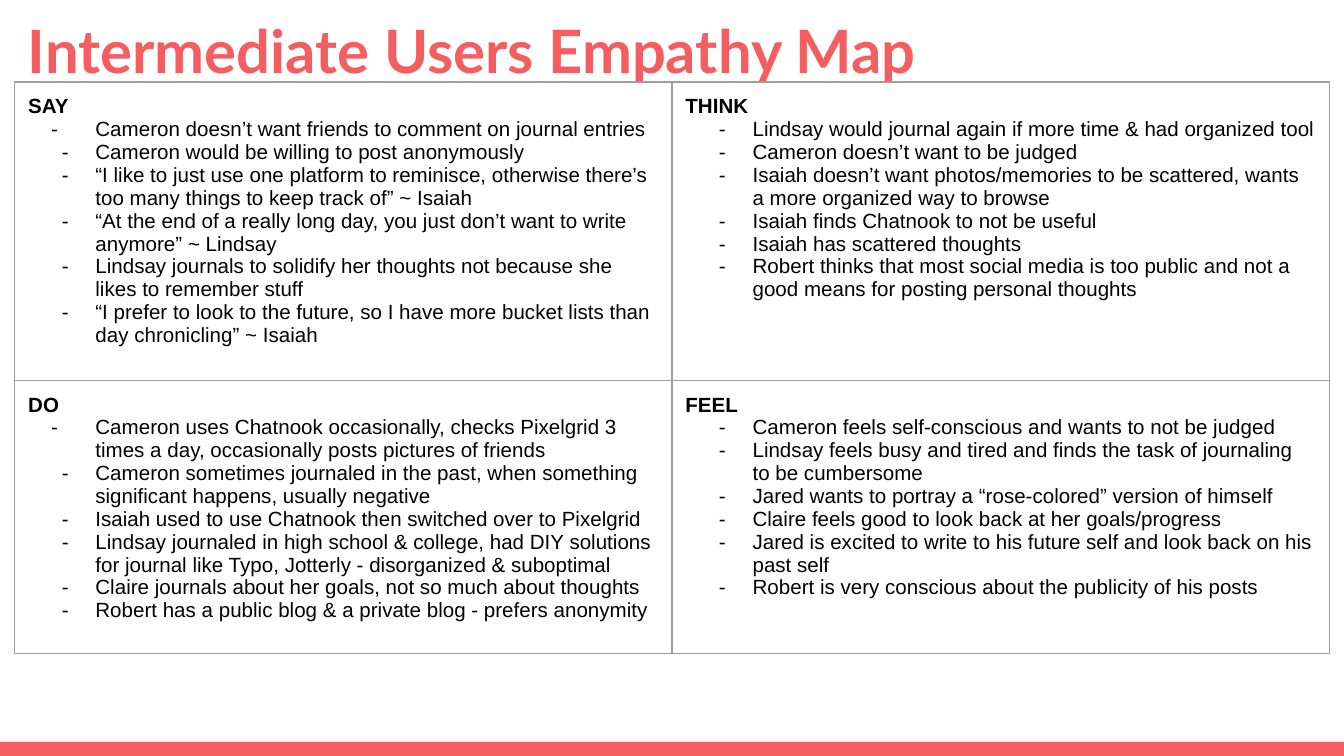
"""Build the empathy map slide for intermediate users."""
from lxml.etree import SubElement
from pptx import Presentation
from pptx.dml.color import RGBColor
from pptx.enum.shapes import MSO_SHAPE
from pptx.enum.text import MSO_ANCHOR
from pptx.oxml.ns import qn
from pptx.util import Inches, Pt


def color(code):
    return RGBColor.from_string(code)


def write(para, text, **values):
    span = para.add_run()
    span.text = text
    span.font.color.rgb = color(values.pop("ink"))
    for name, value in values.items():
        setattr(span.font, name, value)


CORAL, BLACK, GRAY = "F55E61", "000000", "9E9E9E"
TITLE = {"ink": CORAL, "name": "Lato", "size": Pt(32), "bold": True}
BODY = {"ink": BLACK, "name": "Arial", "size": Pt(11)}
MARGINS = {f"margin_{side}": Inches(0.1) for side in ("left", "top", "right", "bottom")}
QUADRANTS = [
    ("SAY", [
        "Cameron doesn’t want friends to comment on journal entries",
        "Cameron would be willing to post anonymously",
        "“I like to just use one platform to reminisce, otherwise there’s too many things to keep track of” ~ Isaiah",
        "“At the end of a really long day, you just don’t want to write anymore” ~ Lindsay",
        "Lindsay journals to solidify her thoughts not because she likes to remember stuff",
        "“I prefer to look to the future, so I have more bucket lists than day chronicling” ~ Isaiah",
    ]),
    ("THINK", [
        "Lindsay would journal again if more time & had organized tool",
        "Cameron doesn’t want to be judged",
        "Isaiah doesn’t want photos/memories to be scattered, wants a more organized way to browse",
        "Isaiah finds Chatnook to not be useful",
        "Isaiah has scattered thoughts",
        "Robert thinks that most social media is too public and not a good means for posting personal thoughts",
    ]),
    ("DO", [
        "Cameron uses Chatnook occasionally, checks Pixelgrid 3 times a day, occasionally posts pictures of friends",
        "Cameron sometimes journaled in the past, when something significant happens, usually negative",
        "Isaiah used to use Chatnook then switched over to Pixelgrid",
        "Lindsay journaled in high school & college, had DIY solutions for journal like Typo, Jotterly - disorganized & suboptimal",
        "Claire journals about her goals, not so much about thoughts",
        "Robert has a public blog & a private blog - prefers anonymity",
    ]),
    ("FEEL", [
        "Cameron feels self-conscious and wants to not be judged",
        "Lindsay feels busy and tired and finds the task of journaling to be cumbersome",
        "Jared wants to portray a “rose-colored” version of himself",
        "Claire feels good to look back at her goals/progress",
        "Jared is excited to write to his future self and look back on his past self",
        "Robert is very conscious about the publicity of his posts",
    ]),
]

deck = Presentation()
deck.slide_width = Inches(10)
deck.slide_height = deck.slide_width * 9 // 16
page = deck.slides.add_slide(deck.slide_layouts[6])

footer = page.shapes.add_shape(MSO_SHAPE.RECTANGLE, 0, Inches(5.52), Inches(10), Inches(0.11))
footer.shadow.inherit = False
footer.fill.solid()
footer.fill.fore_color.rgb = color(CORAL)
footer.line.fill.background()

title = page.shapes.add_textbox(Inches(0.11), 0, Inches(9.77), Inches(0.63)).text_frame
for name, value in {**MARGINS, "word_wrap": True, "vertical_anchor": MSO_ANCHOR.TOP}.items():
    setattr(title, name, value)
write(title.paragraphs[0], "Intermediate Users Empathy Map", **TITLE)

grid = page.shapes.add_table(2, 2, Inches(0.11), Inches(0.61), Inches(9.78), Inches(3.11)).table
grid.first_row = grid.horz_banding = False
for column in grid.columns:
    column.width = Inches(4.89)
for row, height in zip(grid.rows, (2.13, 0.98)):
    row.height = Inches(height)

for cell, (heading, notes) in zip(grid.iter_cells(), QUADRANTS):
    for name, value in MARGINS.items():
        setattr(cell, name, value)
    properties = cell._tc.get_or_add_tcPr()
    for side in ("lnL", "lnR", "lnT", "lnB"):
        border = SubElement(properties, qn(f"a:{side}"), w=str(Pt(0.75)))
        SubElement(SubElement(border, qn("a:solidFill")), qn("a:srgbClr"), val=GRAY)
    cell.fill.background()
    write(cell.text_frame.paragraphs[0], heading, bold=True, **BODY)
    for index, note in enumerate(notes):
        para = cell.text_frame.add_paragraph()
        write(para, note, bold=False, **BODY)
        hanging = 0.33 if index == 0 and heading in ("SAY", "DO") else 0.25
        layout = para._p.get_or_add_pPr()
        layout.set("marL", str(Inches(0.5)))
        layout.set("indent", str(-Inches(hanging)))
        SubElement(SubElement(layout, qn("a:buClr")), qn("a:srgbClr"), val=BLACK)
        SubElement(layout, qn("a:buSzPts"), val="1100")
        SubElement(layout, qn("a:buFont"), typeface="Arial")
        SubElement(layout, qn("a:buChar"), char="-")
        ending = SubElement(para._p, qn("a:endParaRPr"), sz="1100")
        SubElement(ending, qn("a:latin"), typeface="Arial")

deck.save("out.pptx")
